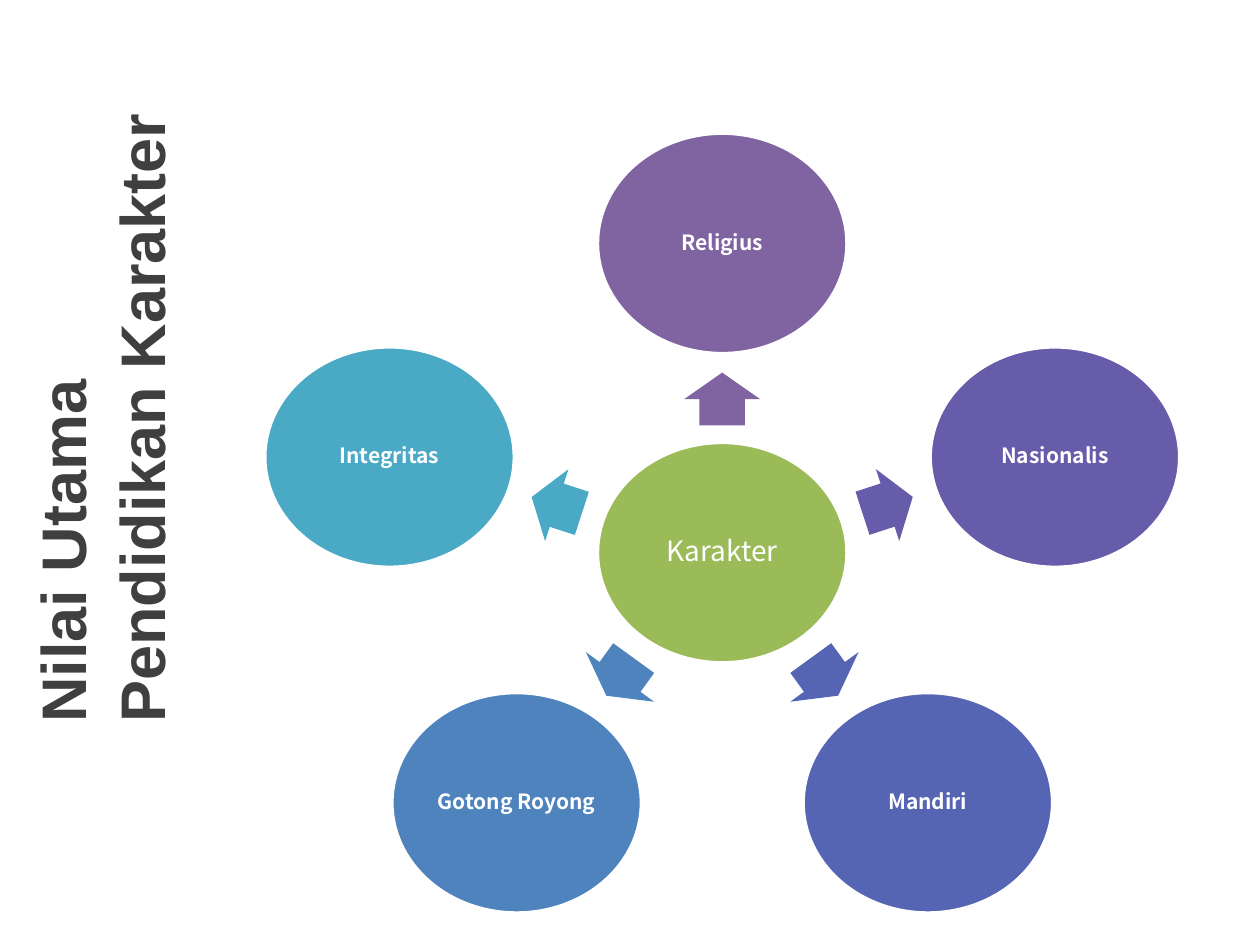
import math
from dataclasses import dataclass

import pptx
import pptx.dml.color
import pptx.enum.shapes
import pptx.enum.text
import pptx.util

Pt = pptx.util.Pt
SHAPE = pptx.enum.shapes.MSO_SHAPE
ALIGN = pptx.enum.text.PP_ALIGN
MIDDLE = pptx.enum.text.MSO_ANCHOR.MIDDLE

COLORS = {
    "title": "3F3F3F",
    "white": "FFFFFF",
    "green": "9BBB59",
    "purple": "8064A2",
    "violet": "665CAA",
    "indigo": "5665B3",
    "blue": "4F83BD",
    "teal": "4AA9C5",
}
CENTER_X, CENTER_Y = 412.7, 315.8
VALUE_RX, VALUE_RY = 199.9, 176.7
ARROW_RX, ARROW_RY = 99.4, 87.8
OVAL_W, OVAL_H = 142.6, 126


@dataclass
class Value:
    name: str
    color: str
    arrow_w: float = 30.2
    arrow_h: float = 43.2


VALUES = [
    Value("Religius", "purple"),
    Value("Nasionalis", "violet"),
    Value("Mandiri", "indigo", 26.6, 48.2),
    Value("Gotong Royong", "blue", 26.6, 48.2),
    Value("Integritas", "teal"),
]


def rgb(name: str) -> pptx.dml.color.RGBColor:
    return pptx.dml.color.RGBColor.from_string(COLORS[name])


def add_filled(s, kind, x: float, y: float, w: float, h: float, color: str):
    sp = s.shapes.add_shape(kind, Pt(x - w / 2), Pt(y - h / 2), Pt(w), Pt(h))
    sp.shadow.inherit = False
    sp.fill.solid()
    sp.fill.fore_color.rgb = rgb(color)
    return sp


def add_oval(s, x: float, y: float, text: str, color: str, size: float, bold: bool) -> None:
    sp = add_filled(s, SHAPE.OVAL, x, y, OVAL_W, OVAL_H, color)
    sp.line.color.rgb = rgb("white")
    sp.line.width = Pt(2)
    tf = sp.text_frame
    tf.word_wrap = True
    tf.vertical_anchor = MIDDLE
    tf.margin_left = tf.margin_right = tf.margin_top = tf.margin_bottom = Pt(1.5)
    p = tf.paragraphs[0]
    p.text = text
    p.alignment = ALIGN.CENTER
    p.line_spacing = 0.9
    p.font.name = "Noto Sans CJK KR"
    p.font.size = Pt(size)
    p.font.bold = bold
    p.font.color.rgb = rgb("white")


def add_arrow(s, x: float, y: float, angle: float, value: Value) -> None:
    sp = add_filled(s, SHAPE.RIGHT_ARROW, x, y, value.arrow_w, value.arrow_h, value.color)
    sp.line.fill.background()
    sp.adjustments[0] = 0.6
    sp.adjustments[1] = 0.5
    sp.rotation = angle % 360


def add_title(s, text: str) -> None:
    sp = s.shapes.add_textbox(Pt(-148), Pt(173.5), Pt(409), Pt(84.2))
    sp.rotation = 270
    tf = sp.text_frame
    tf.word_wrap = True
    tf.vertical_anchor = MIDDLE
    p = tf.paragraphs[0]
    p.text = text
    p.line_spacing = 1.05
    p.font.name = "Arial"
    p.font.size = Pt(36)
    p.font.bold = True
    p.font.color.rgb = rgb("title")


def main() -> None:
    prs = pptx.Presentation()
    prs.slide_width, prs.slide_height = Pt(720), Pt(540)
    s = prs.slides.add_slide(prs.slide_layouts[6])
    add_title(s, "Nilai Utama Pendidikan Karakter")
    add_oval(s, CENTER_X, CENTER_Y, "Karakter", "green", 16, False)
    for i, value in enumerate(VALUES):
        angle = -90 + i * 360 / len(VALUES)
        dx, dy = math.cos(math.radians(angle)), math.sin(math.radians(angle))
        add_arrow(s, CENTER_X + ARROW_RX * dx, CENTER_Y + ARROW_RY * dy, angle, value)
        add_oval(s, CENTER_X + VALUE_RX * dx, CENTER_Y + VALUE_RY * dy,
                 value.name, value.color, 12, True)
    prs.save("out.pptx")


if __name__ == "__main__":
    main()
